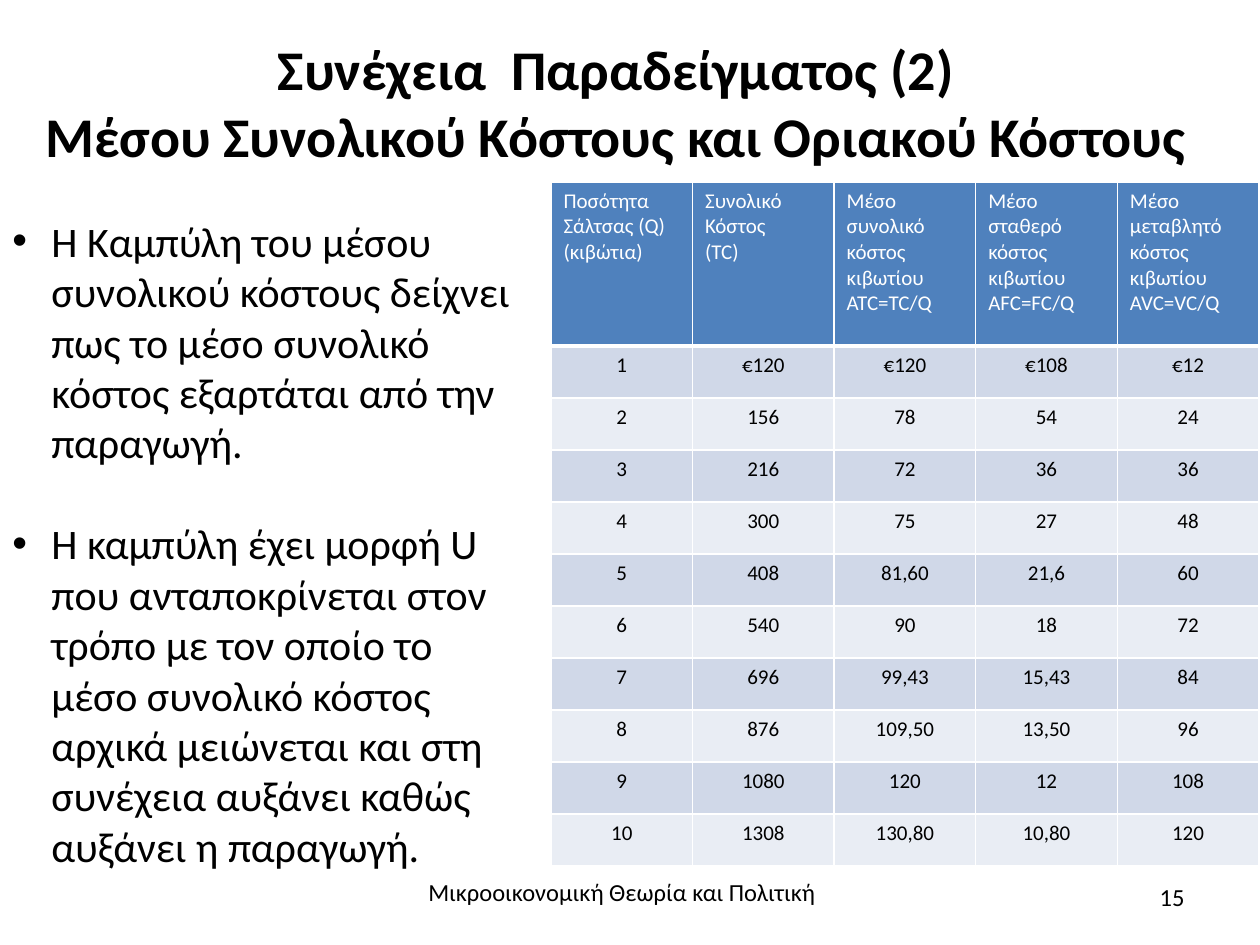
from lxml import etree
from pptx import Presentation
from pptx.dml.color import RGBColor
from pptx.enum.text import MSO_ANCHOR, MSO_AUTO_SIZE, PP_ALIGN
from pptx.oxml.ns import qn
from pptx.util import Emu, Pt

LEFT, CENTER, RIGHT = PP_ALIGN.LEFT, PP_ALIGN.CENTER, PP_ALIGN.RIGHT
MIDDLE = MSO_ANCHOR.MIDDLE
NO_FIT, GROW = MSO_AUTO_SIZE.NONE, MSO_AUTO_SIZE.SHAPE_TO_FIT_TEXT

PX = 914400 // 126
FONT = "Calibri"
COLORS = {
    "text": "000000",
    "white": "FFFFFF",
    "head": "4F81BD",
    "odd": "D0D8E8",
    "even": "E9EDF4",
}

TITLE = ("Συνέχεια  Παραδείγματος (2) \v"
         "Μέσου Συνολικού Κόστους και Οριακού Κόστους ")
POINTS = [
    "Η Καμπύλη του μέσου συνολικού κόστους δείχνει πως το μέσο συνολικό "
    "κόστος εξαρτάται από την παραγωγή.",
    "Η καμπύλη έχει μορφή U που ανταποκρίνεται στον τρόπο με τον οποίο το "
    "μέσο συνολικό κόστος αρχικά μειώνεται και στη συνέχεια αυξάνει καθώς "
    "αυξάνει η παραγωγή.",
]
HEADS = [
    "Ποσότητα\nΣάλτσας (Q) (κιβώτια)",
    "Συνολικό Κόστος\n(TC)",
    "Μέσο συνολικό κόστος κιβωτίου\nATC=TC/Q",
    "Μέσο σταθερό κόστος κιβωτίου\nAFC=FC/Q",
    "Μέσο μεταβλητό κόστος κιβωτίου\nAVC=VC/Q",
]
COSTS = [
    ["1", "€120", "€120", "€108", "€12"],
    ["2", "156", "78", "54", "24"],
    ["3", "216", "72", "36", "36"],
    ["4", "300", "75", "27", "48"],
    ["5", "408", "81,60", "21,6", "60"],
    ["6", "540", "90", "18", "72"],
    ["7", "696", "99,43", "15,43", "84"],
    ["8", "876", "109,50", "13,50", "96"],
    ["9", "1080", "120", "12", "108"],
    ["10", "1308", "130,80", "10,80", "120"],
]


def px(*sizes):
    return [Emu(size * PX) for size in sizes]


def style(frame, size, align=LEFT, color="text", bold=False):
    for para in frame.paragraphs:
        para.alignment = align
        font = para.font
        font.name, font.size, font.bold = FONT, Pt(size), bold
        font.color.rgb = RGBColor.from_string(COLORS[color])


def add_title(slide):
    title = slide.shapes.title
    title.left, title.top, title.width, title.height = px(0, 37, 1245, 130)
    frame = title.text_frame
    frame.text = TITLE
    frame.auto_size = NO_FIT
    frame.vertical_anchor = MIDDLE
    style(frame, 32, CENTER, bold=True)


def add_text(slide, text, box, size, align=LEFT):
    frame = slide.shapes.add_textbox(*px(*box)).text_frame
    frame.word_wrap = True
    frame.text = text
    style(frame, size, align)
    return frame


def add_bullets(slide):
    frame = add_text(slide, "\n".join(POINTS), (0, 209, 536, 674), 24)
    frame.auto_size = GROW
    for num, para in enumerate(frame.paragraphs):
        props = para._p.get_or_add_pPr()
        indent = 39 * PX
        props.set("marL", str(indent))
        props.set("indent", str(-indent))
        mark = etree.Element(qn("a:buFont"), typeface="Arial")
        props.insert(0, mark)
        mark.addnext(etree.Element(qn("a:buChar"), char="•"))
        if num:
            para.space_before = Pt(29)


def add_edges(cell, base):
    """Draw white cell borders; base is the bottom width in points."""
    props = cell._tc.get_or_add_tcPr()
    sides = {"lnL": 1, "lnR": 1, "lnT": 1, "lnB": base}
    for num, (side, width) in enumerate(sides.items()):
        line = etree.Element(qn(f"a:{side}"), w=str(Pt(width)))
        fill = etree.SubElement(line, qn("a:solidFill"))
        etree.SubElement(fill, qn("a:srgbClr"), val=COLORS["white"])
        props.insert(num, line)


def fill_cell(cell, text, fill, align, color, base):
    cell.text = text
    cell.fill.solid()
    cell.fill.fore_color.rgb = RGBColor.from_string(COLORS[fill])
    style(cell.text_frame, 12, align, color)
    add_edges(cell, base)


def add_costs(slide):
    rows = [HEADS] + COSTS
    frame = slide.shapes.add_table(len(rows), len(HEADS),
                                   *px(551, 182, 708, 684))
    table = frame.table
    table.first_row = table.horz_banding = False
    for num, row in enumerate(rows):
        if num == 0:
            height, look = 164, ("head", LEFT, "white", 3)
        else:
            band = "odd" if num % 2 else "even"
            height, look = 52, (band, CENTER, "text", 1)
        table.rows[num].height = Emu(height * PX)
        for col, text in enumerate(row):
            fill_cell(table.cell(num, col), text, *look)


def main():
    deck = Presentation()
    deck.slide_width, deck.slide_height = px(1260, 945)
    slide = deck.slides.add_slide(deck.slide_layouts[5])
    add_title(slide)
    add_text(slide, "Μικροοικονομική Θεωρία και Πολιτική",
             (329, 871, 586, 69), 14, CENTER)
    add_text(slide, "15", (903, 876, 294, 50), 14, RIGHT)
    add_bullets(slide)
    add_costs(slide)
    deck.save("out.pptx")


if __name__ == "__main__":
    main()
